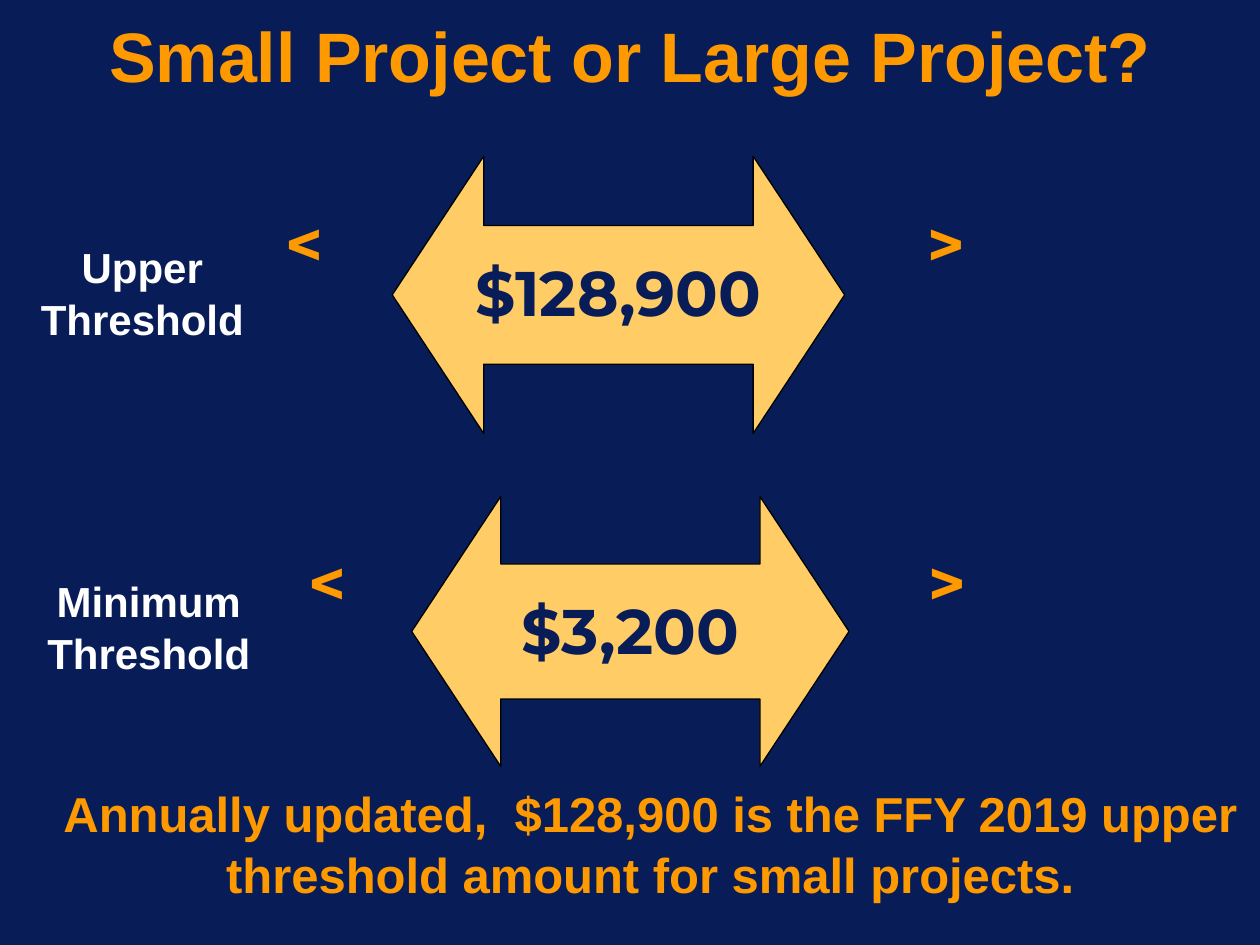
import pptx
import pptx.dml.color
import pptx.enum.shapes
import pptx.enum.text
import pptx.oxml.xmlchemy
import pptx.util
from pptx.util import Cm

COLOURS = {"navy": "081D58", "orange": "FF9900", "sand": "FFCC66",
           "white": "FFFFFF", "black": "000000"}


def colour(name):
    """Return the named colour."""
    return pptx.dml.color.RGBColor.from_string(COLOURS[name])


def place(shape, box):
    """Move a shape to a left, top, width, height box in centimetres."""
    shape.left, shape.top, shape.width, shape.height = map(Cm, box)


def write(shape, text, size=36, font="Montserrat", ink="orange", wrap=False,
          spacing=None, anchor=pptx.enum.text.MSO_ANCHOR.TOP):
    """Fill a shape with centred bold text, one paragraph per line."""
    frame = shape.text_frame
    frame.text = text
    frame.auto_size = pptx.enum.text.MSO_AUTO_SIZE.NONE
    frame.word_wrap = wrap
    frame.vertical_anchor = anchor
    for para in frame.paragraphs:
        para.alignment = pptx.enum.text.PP_ALIGN.CENTER
        para.line_spacing = spacing
        for span in para.runs:
            span.font.name = font
            span.font.size = pptx.util.Pt(size)
            span.font.bold = True
            span.font.color.rgb = colour(ink)


def add_text(shapes, box, text, **style):
    """Add a text box with formatted text."""
    write(shapes.add_textbox(*map(Cm, box)), text, **style)


def add_title(page, box, text):
    """Place the slide title."""
    place(page.shapes.title, box)
    write(page.shapes.title, text, size=40, font="Arial", wrap=True, spacing=0.95,
          anchor=pptx.enum.text.MSO_ANCHOR.MIDDLE)


def add_note(page, box, text):
    """Place the closing statement in the body placeholder."""
    body = page.placeholders[1]
    place(body, box)
    write(body, text, size=28, font="Arial", wrap=True, spacing=1.05)
    para = body.text_frame.paragraphs[0]
    para.space_before = pptx.util.Pt(0)
    properties = para._p.get_or_add_pPr()
    properties.set("marL", str(Cm(0.9)))
    properties.set("indent", "0")
    properties.append(pptx.oxml.xmlchemy.OxmlElement("a:buNone"))


def add_threshold(page, box, amount):
    """Draw a double arrow with its amount between two comparison signs."""
    left, top, width, height = box

    def part(x, y, across, down):
        return left + x * width, top + y * height, across * width, down * height

    shapes = page.shapes.add_group_shape().shapes
    for sign, x in (("<", 0), (">", 0.88)):
        add_text(shapes, part(x, 0.15, 0.12, 0.7), sign)
    arrow = shapes.add_shape(pptx.enum.shapes.MSO_SHAPE.LEFT_RIGHT_ARROW,
                             *map(Cm, part(0.18, 0, 0.62, 1)))
    arrow.adjustments[1] = 0.33
    arrow.shadow.inherit = False
    arrow.fill.solid()
    arrow.fill.fore_color.rgb = colour("sand")
    arrow.line.color.rgb = colour("black")
    arrow.line.width = pptx.util.Pt(0.75)
    add_text(shapes, part(0.23, 0.33, 0.52, 0.39), amount, ink="navy")


def add_label(page, box, text):
    """Add the white label beside a threshold."""
    add_text(page.shapes, box, text, size=24, font="Arial", ink="white",
             wrap=True, spacing=1.04)


def main():
    """Build the slide and save the deck."""
    deck = pptx.Presentation()
    deck.slide_width, deck.slide_height = Cm(25.4), Cm(19.05)
    page = deck.slides.add_slide(deck.slide_layouts[1])
    page.background.fill.solid()
    page.background.fill.fore_color.rgb = colour("navy")
    add_title(page, (0.1, 0.36, 25.2, 1.63), "Small Project or Large Project?")
    add_note(page, (0, 15.6, 25.32, 2.69),
             "Annually updated,  $128,900 is the FFY 2019 upper threshold amount "
             "for small projects.")
    add_threshold(page, (5.74, 10.01, 14.22, 5.44), "$3,200")
    add_threshold(page, (5.26, 3.15, 14.71, 5.59), "$128,900")
    add_label(page, (0.48, 4.7, 4.78, 2.31), "Upper\nThreshold")
    add_label(page, (0.61, 11.43, 4.78, 2.31), "Minimum\nThreshold")
    deck.save("out.pptx")


if __name__ == "__main__":
    main()
